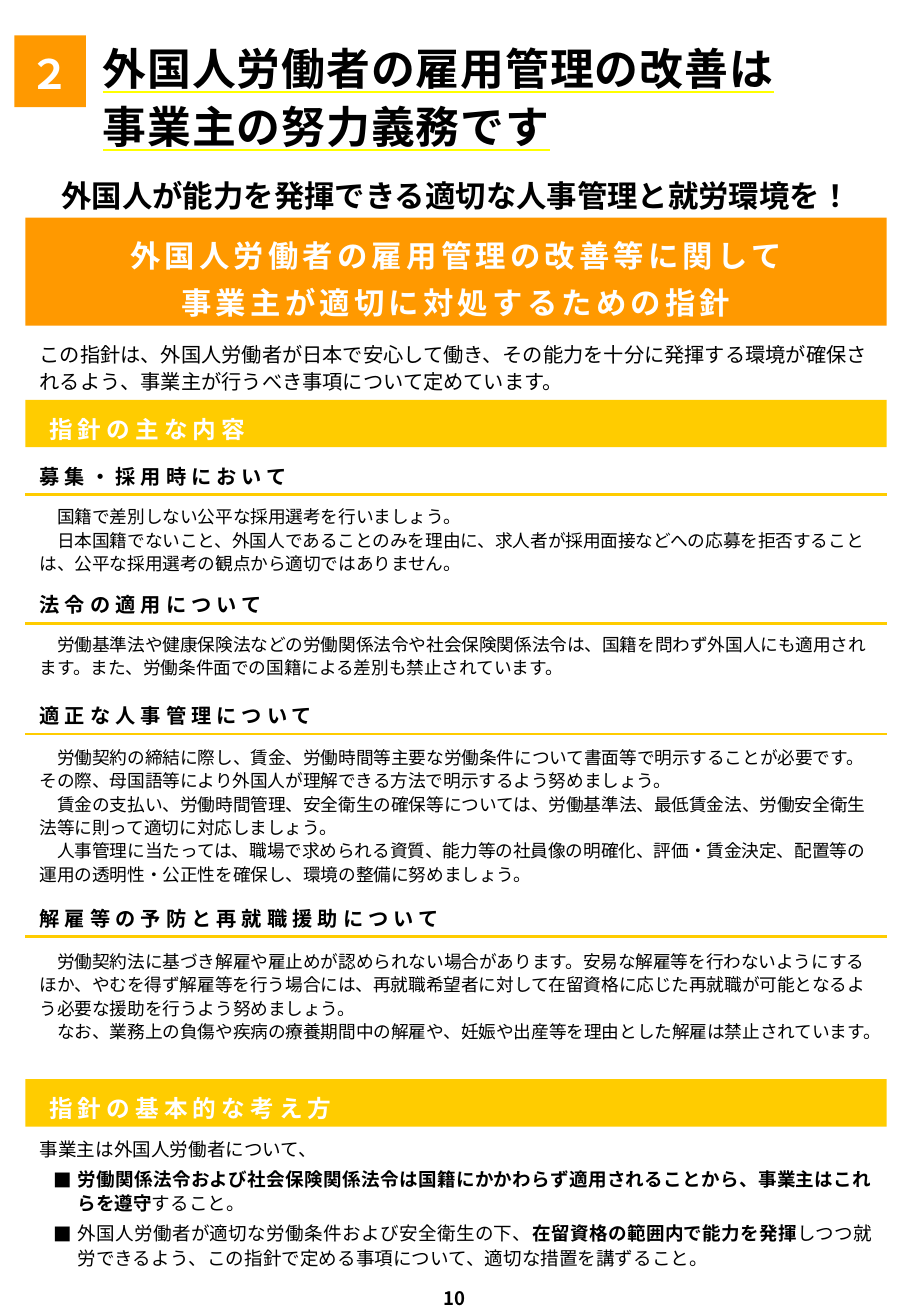
from dataclasses import dataclass, field

from lxml.etree import SubElement
from pptx import Presentation
from pptx.dml.color import RGBColor
from pptx.enum.lang import MSO_LANGUAGE_ID
from pptx.enum.shapes import MSO_CONNECTOR, MSO_SHAPE
from pptx.enum.text import MSO_ANCHOR, MSO_AUTO_SIZE, PP_ALIGN
from pptx.oxml.ns import qn
from pptx.util import Cm, Pt

FONT = "Noto Sans CJK JP"
COLORS = {"black": "000000", "white": "FFFFFF", "orange": "FF9900",
          "amber": "FFCC00", "yellow": "FFFF00"}
LEFT, WIDTH = 0.53, 18.01
HEADING_H = 0.94


@dataclass
class Style:
    size: float
    color: str = "black"
    bold: bool = False
    spacing: float = 0
    underline: str = ""
    para: dict = field(default_factory=dict)
    frame: dict = field(default_factory=dict)


@dataclass
class Box:
    top: float
    height: float
    style: Style
    lines: list
    left: float = LEFT
    width: float = WIDTH
    fill: str = ""
    preset: MSO_SHAPE = MSO_SHAPE.RECTANGLE


@dataclass
class Section:
    top: float
    heading: str
    heading_width: float
    body_top: float
    body_height: float
    lines: list


CENTER = PP_ALIGN.CENTER
MIDDLE = {"vertical_anchor": MSO_ANCHOR.MIDDLE}
NO_WRAP = {"word_wrap": False}
LOW = {"margin_bottom": Cm(0.15)}

TITLE = Style(26, bold=True, spacing=0.5, underline="yellow",
              para={"line_spacing": 1.1}, frame=NO_WRAP | {"margin_bottom": Cm(0.1)})
NUMBER = Style(24, "white", True, para={"alignment": CENTER},
               frame=MIDDLE | {"auto_size": MSO_AUTO_SIZE.NONE, "margin_bottom": Cm(0.1)})
LEAD = Style(18, bold=True, para={"alignment": CENTER, "line_spacing": 1.2})
BANNER = Style(18, "white", True, 2.5, para={"alignment": CENTER, "line_spacing": 1.3},
               frame=MIDDLE)
INTRO = Style(12, para={"line_spacing": 1.1})
BAND = Style(14, "white", True, 3, para={"line_spacing": 1.2},
             frame=MIDDLE | {"margin_left": Cm(0.5), "margin_bottom": Cm(0.1)})
HEADING = Style(12, bold=True, spacing=3, para={"line_spacing": 1.2}, frame=NO_WRAP | LOW)
BODY = Style(10.5, para={"line_spacing": 1.1}, frame=LOW)
LIST = Style(11, para={"alignment": PP_ALIGN.JUSTIFY, "line_spacing": 1.1}, frame=LOW)
PAGE = Style(11, bold=True, para={"alignment": CENTER})

TITLE_BOX = Box(0.56, 2.74, TITLE, ["外国人労働者の雇用管理の改善は", "事業主の努力義務です"],
                1.85, 14.76)
LIST_BOX = Box(23.55, 3.15, LIST, [
    "事業主は外国人労働者について、",
    [("労働関係法令および社会保険関係法令は国籍にかかわらず適用されることから、事業主はこれらを遵守", True),
     ("すること。", False)],
    [("外国人労働者が適切な労働条件および安全衛生の下、", False),
     ("在留資格の範囲内で能力を発揮", True),
     ("しつつ就労できるよう、この指針で定める事項について、適切な措置を講ずること。", False)],
])
BOXES = [
    Box(6.91, 1.45, INTRO, ["この指針は、外国人労働者が日本で安心して働き、その能力を十分に発揮する環境が確保されるよう、事業主が行うべき事項について定めています。"]),
    Box(3.35, 1.22, LEAD, ["外国人が能力を発揮できる適切な人事管理と就労環境を！"]),
    Box(4.55, 2.26, BANNER, ["外国人労働者の雇用管理の改善等に関して", "事業主が適切に対処するための指針"],
        fill="orange"),
    Box(8.36, 0.99, BAND, ["指針の主な内容"], fill="amber", preset=MSO_SHAPE.PENTAGON),
    Box(22.56, 0.99, BAND, ["指針の基本的な考え方"], fill="amber", preset=MSO_SHAPE.PENTAGON),
    Box(26.7, 0.81, PAGE, ["10"], 7.29, 4.45),
    Box(0.74, 1.5, NUMBER, ["２"], 0.3, 1.5, "orange"),
]
SECTIONS = [
    Section(9.4, "募集・採用時において", 5.94, 10.34, 1.91, [
        "　国籍で差別しない公平な採用選考を行いましょう。",
        "　日本国籍でないこと、外国人であることのみを理由に、求人者が採用面接などへの応募を拒否することは、公平な採用選考の観点から適切ではありません。"]),
    Section(12.09, "法令の適用について", 5.41, 13.0, 1.4, [
        "　労働基準法や健康保険法などの労働関係法令や社会保険関係法令は、国籍を問わず外国人にも適用されます。また、労働条件面での国籍による差別も禁止されています。"]),
    Section(14.4, "適正な人事管理について", 6.48, 15.37, 3.33, [
        "　労働契約の締結に際し、賃金、労働時間等主要な労働条件について書面等で明示することが必要です。その際、母国語等により外国人が理解できる方法で明示するよう努めましょう。",
        "　賃金の支払い、労働時間管理、安全衛生の確保等については、労働基準法、最低賃金法、労働安全衛生法等に則って適切に対応しましょう。",
        "　人事管理に当たっては、職場で求められる資質、能力等の社員像の明確化、評価・賃金決定、配置等の運用の透明性・公正性を確保し、環境の整備に努めましょう。"]),
    Section(18.64, "解雇等の予防と再就職援助について", 9.14, 19.63, 2.82, [
        "　労働契約法に基づき解雇や雇止めが認められない場合があります。安易な解雇等を行わないようにするほか、やむを得ず解雇等を行う場合には、再就職希望者に対して在留資格に応じた再就職が可能となるよう必要な援助を行うよう努めましょう。",
        "　なお、業務上の負傷や疾病の療養期間中の解雇や、妊娠や出産等を理由とした解雇は禁止されています。"]),
]


def set_all(target, values: dict) -> None:
    for name, value in values.items():
        setattr(target, name, value)


def rgb(name: str) -> RGBColor:
    return RGBColor.from_string(COLORS[name])


def format_run(r, style: Style, bold: bool) -> None:
    set_all(r.font, {"size": Pt(style.size), "bold": bold, "name": FONT,
                     "language_id": MSO_LANGUAGE_ID.JAPANESE})
    r.font.color.rgb = rgb(style.color)
    rPr = r.font._element
    SubElement(rPr, qn("a:ea")).set("typeface", FONT)
    if style.spacing:
        rPr.set("spc", str(round(style.spacing * 100)))
    if style.underline:
        r.font.underline = True
        u_fill = SubElement(rPr, qn("a:uFill"))
        solid = SubElement(u_fill, qn("a:solidFill"))
        SubElement(solid, qn("a:srgbClr")).set("val", COLORS[style.underline])
        rPr.find(qn("a:latin")).addprevious(u_fill)


def fill_text(sp, box: Box) -> None:
    tf, style = sp.text_frame, box.style
    set_all(tf, {"word_wrap": True, "auto_size": MSO_AUTO_SIZE.SHAPE_TO_FIT_TEXT,
                 "vertical_anchor": MSO_ANCHOR.TOP, "margin_left": Cm(0.3),
                 "margin_right": Cm(0.3), "margin_top": Cm(0.2),
                 "margin_bottom": Cm(0.13)} | style.frame)
    for i, line in enumerate(box.lines):
        p = tf.paragraphs[0] if i == 0 else tf.add_paragraph()
        set_all(p, {"alignment": PP_ALIGN.LEFT, "space_before": Pt(0)} | style.para)
        for text, bold in [(line, style.bold)] if isinstance(line, str) else line:
            r = p.add_run()
            r.text = text
            format_run(r, style, bold)


def place(sp, box: Box) -> None:
    set_all(sp, {"left": Cm(box.left), "top": Cm(box.top),
                 "width": Cm(box.width), "height": Cm(box.height)})
    fill_text(sp, box)


def add_box(slide, box: Box) -> None:
    area = [Cm(v) for v in (box.left, box.top, box.width, box.height)]
    if not box.fill:
        fill_text(slide.shapes.add_textbox(*area), box)
        return
    sp = slide.shapes.add_shape(box.preset, *area)
    sp.shadow.inherit = False
    sp.fill.solid()
    sp.fill.fore_color.rgb = rgb(box.fill)
    sp.line.fill.background()
    if box.preset == MSO_SHAPE.PENTAGON:
        sp.adjustments[0] = 0
    fill_text(sp, box)


def add_section(slide, section: Section) -> None:
    add_box(slide, Box(section.body_top, section.body_height, BODY, section.lines))
    add_box(slide, Box(section.top, HEADING_H, HEADING, [section.heading],
                       width=section.heading_width))
    y = Cm(section.top + HEADING_H)
    rule = slide.shapes.add_connector(MSO_CONNECTOR.STRAIGHT, Cm(LEFT), y, Cm(LEFT + WIDTH), y)
    rule.line.color.rgb = rgb("amber")
    rule.line.width = Pt(1.5)
    SubElement(rule._element.spPr, qn("a:effectLst"))


def indent_list(sp) -> None:
    """Outdent the opening line and give the others a square bullet."""
    for i, p in enumerate(sp.text_frame.paragraphs):
        margin, hang = (0.79, 0.5) if i else (0.53, 0.53)
        if i:
            p.space_before = Pt(3)
        pPr = p._p.get_or_add_pPr()
        pPr.set("marL", str(Cm(margin)))
        pPr.set("indent", str(-Cm(hang)))
        if i:
            SubElement(pPr, qn("a:buFont")).set("typeface", FONT)
            SubElement(pPr, qn("a:buChar")).set("char", "■")
        else:
            SubElement(pPr, qn("a:buNone"))


def main() -> None:
    prs = Presentation()
    set_all(prs, {"slide_width": Cm(19.05), "slide_height": Cm(27.51)})
    slide = prs.slides.add_slide(prs.slide_layouts[1])
    place(slide.shapes.title, TITLE_BOX)
    body = slide.placeholders[1]
    place(body, LIST_BOX)
    indent_list(body)
    for box in BOXES:
        add_box(slide, box)
    for section in SECTIONS:
        add_section(slide, section)
    prs.save("out.pptx")


if __name__ == "__main__":
    main()
